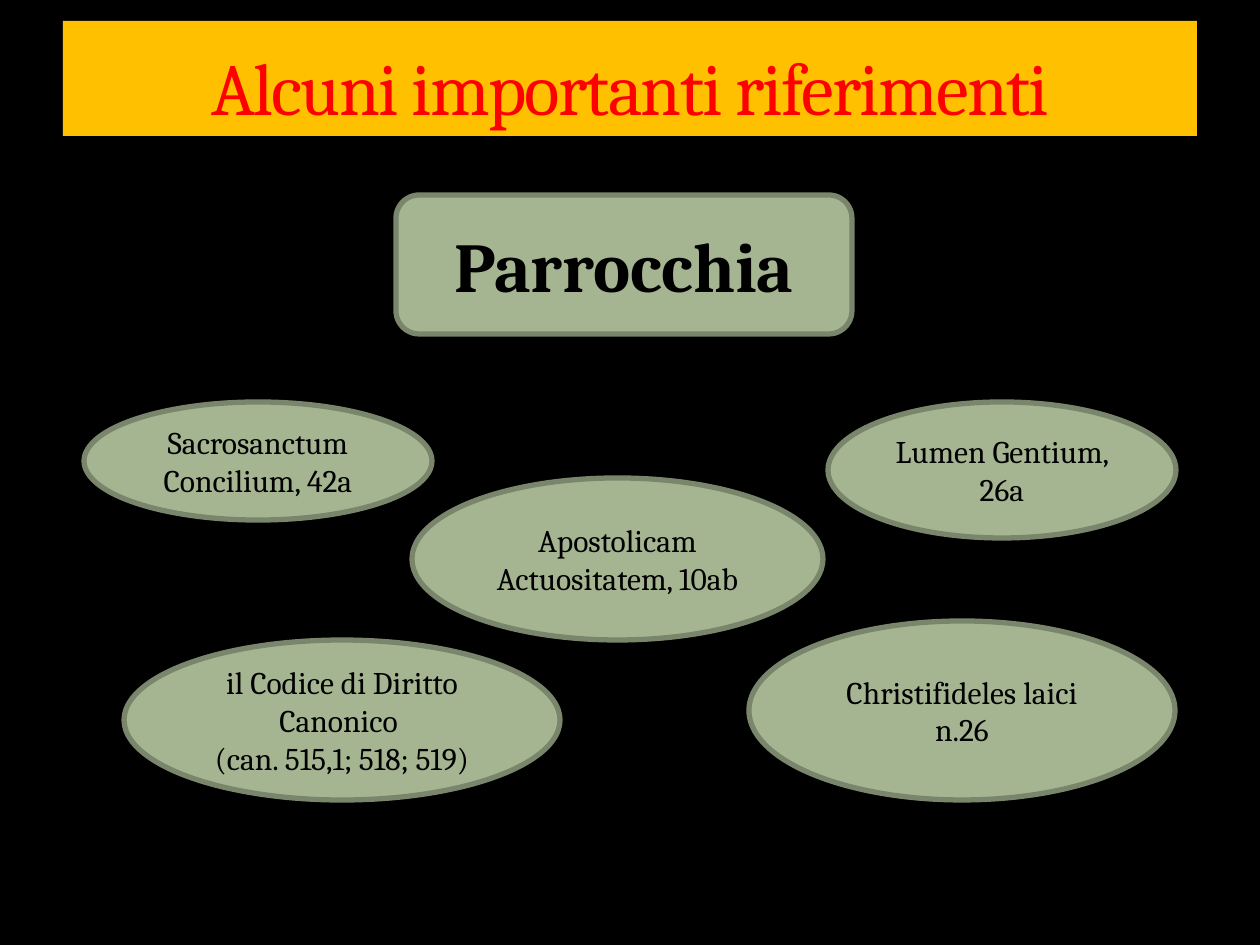
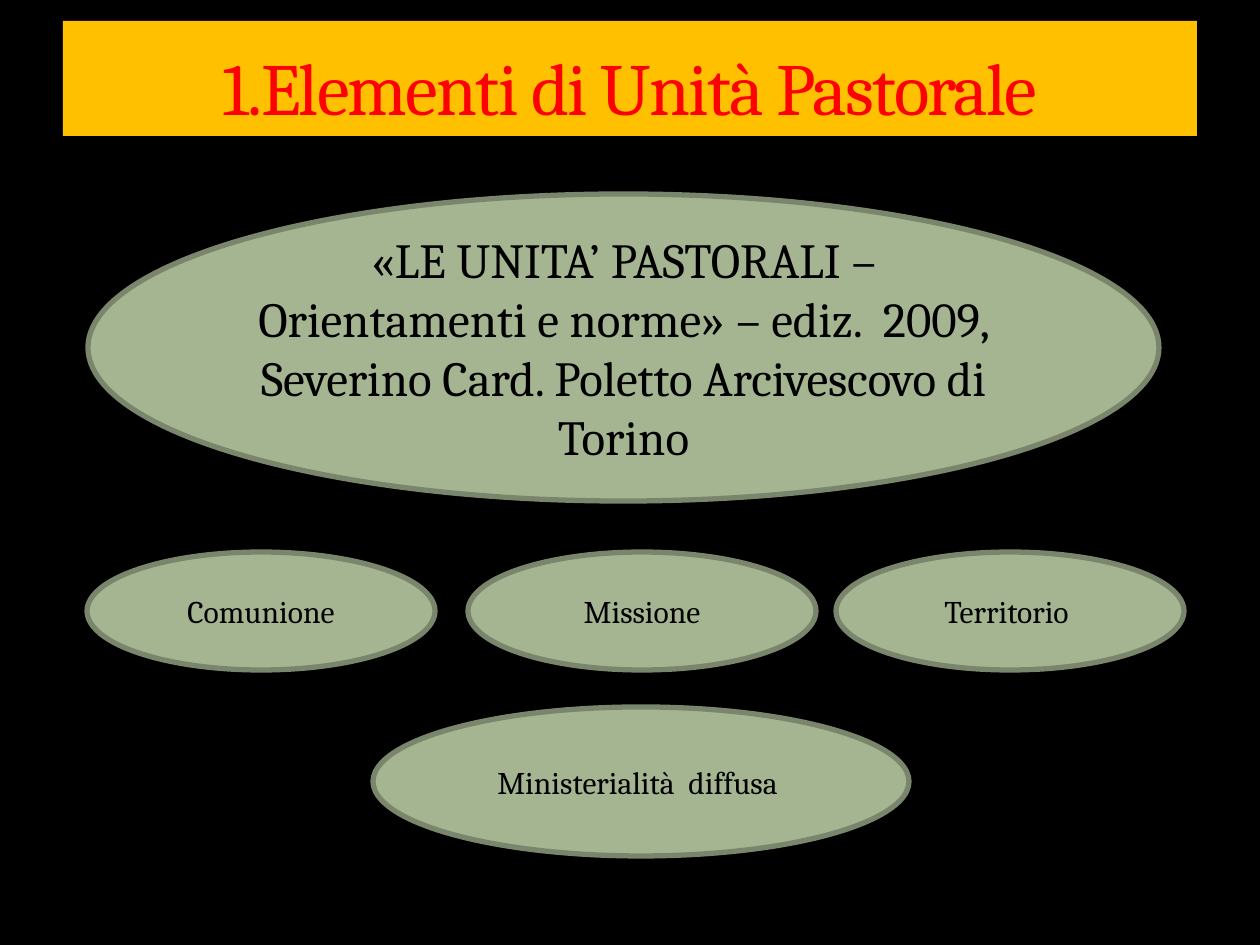
from lxml.etree import SubElement
from pptx import Presentation
from pptx.dml.color import RGBColor
from pptx.enum.shapes import MSO_SHAPE as Shape
from pptx.enum.text import MSO_ANCHOR as Anchor, PP_ALIGN as Align
from pptx.oxml.ns import qn
from pptx.util import Pt

PX = 914400 / 126
FONT = "Cambria"
COLORS = {
    "background": "000000",
    "band": "FFC000",
    "title": "FF0000",
    "title_outline": "3C4422",
    "fill": "A5B592",
    "border": "7A866C",
    "text": "000000",
}

TITLE_BOX = (63, 21, 1134, 115)
SMALL = (348, 118)
ROW_TOP = 552
BODY = {"size": Pt(18)}
LARGE = {"size": Pt(28)}
HEADING = {"size": Pt(40), "bold": True}
OVAL = Shape.OVAL
ROUNDED = Shape.FLOWCHART_ALTERNATE_PROCESS

SLIDES = [
    ("Alcuni importanti riferimenti", [
        (OVAL, (84, 402, *SMALL), ["Sacrosanctum Concilium, 42a"], BODY),
        (OVAL, (828, 402, 348, 136), ["Lumen Gentium, 26a"], BODY),
        (OVAL, (412, 478, 411, 162), ["Apostolicam Actuositatem, 10ab"], BODY),
        (OVAL, (124, 640, 436, 160),
         ["il Codice di Diritto Canonico ", "(can. 515,1; 518; 519)"], BODY),
        (ROUNDED, (396, 195, 456, 139), ["Parrocchia"], HEADING),
        (OVAL, (749, 621, 426, 179), ["Christifideles laici n.26"], BODY),
    ]),
    ("1.Elementi di Unità Pastorale", [
        (OVAL, (88, 194, 1071, 307),
         ["«LE UNITA’ PASTORALI – Orientamenti e norme» – ediz.  2009, "
          "Severino Card. Poletto Arcivescovo di Torino"], LARGE),
        (OVAL, (373, 707, 536, 149), ["Ministerialità  diffusa "], BODY),
        *[(OVAL, (left, ROW_TOP, *SMALL), [label], BODY)
          for label, left in [("Territorio ", 836), ("Missione", 468), ("Comunione", 87)]],
    ]),
]


def color(name):
    return RGBColor.from_string(COLORS[name])


def add_box(page, kind, place, lines, fill, text_color, anchor, font_values):
    box = page.shapes.add_shape(kind, *[round(length * PX) for length in place])
    box.shadow.inherit = False
    box.fill.solid()
    box.fill.fore_color.rgb = color(fill)
    frame = box.text_frame
    frame.word_wrap = True
    frame.vertical_anchor = anchor
    for index, line in enumerate(lines):
        para = frame.add_paragraph() if index else frame.paragraphs[0]
        para.alignment = Align.CENTER
        span = para.add_run()
        span.text = line
        for name, value in {"name": FONT, **font_values}.items():
            setattr(span.font, name, value)
        span.font.color.rgb = color(text_color)
    return box


def add_title(page, text):
    band = add_box(page, Shape.RECTANGLE, TITLE_BOX, [text], "band", "title",
                   Anchor.BOTTOM, {"size": Pt(42)})
    band.line.fill.background()
    style = band.text_frame.paragraphs[0].runs[0].font._element
    style.set("spc", "-100")
    outline = SubElement(style, qn("a:ln"), w=str(Pt(0.25)))
    style.insert(0, outline)
    ink = SubElement(SubElement(outline, qn("a:solidFill")), qn("a:srgbClr"),
                     val=COLORS["title_outline"])
    SubElement(ink, qn("a:alpha"), val="25000")


def add_bubble(page, kind, place, lines, font_values):
    bubble = add_box(page, kind, place, lines, "fill", "text", Anchor.MIDDLE, font_values)
    bubble.line.color.rgb = color("border")
    bubble.line.width = Pt(3)


def main():
    deck = Presentation()
    deck.slide_width = round(1260 * PX)
    deck.slide_height = round(945 * PX)
    for title, bubbles in SLIDES:
        page = deck.slides.add_slide(deck.slide_layouts[6])
        page.background.fill.solid()
        page.background.fill.fore_color.rgb = color("background")
        add_title(page, title)
        for bubble in bubbles:
            add_bubble(page, *bubble)
    deck.save("out.pptx")


if __name__ == "__main__":
    main()
